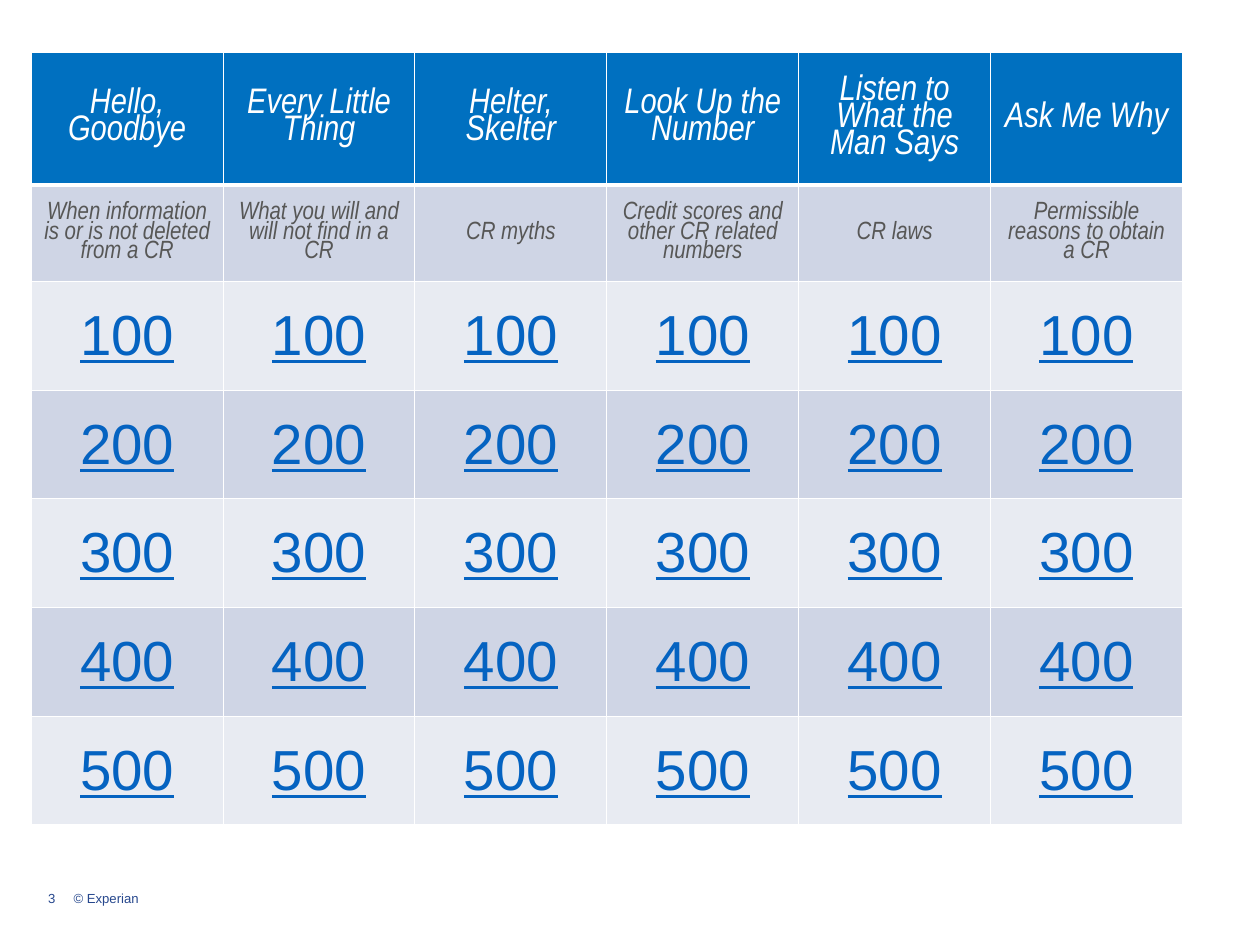
import lxml.etree
import pptx
import pptx.dml.color
import pptx.enum.text
import pptx.oxml.ns
import pptx.util

Inches = pptx.util.Inches
Pt = pptx.util.Pt
qn = pptx.oxml.ns.qn

CATEGORIES = [
    ("Hello, Goodbye", "When information is or is not deleted from a CR"),
    ("Every Little Thing", "What you will and will not find in a CR"),
    ("Helter, Skelter", "CR myths"),
    ("Look Up the Number", "Credit scores and other CR related numbers"),
    ("Listen to What the Man Says", "CR laws"),
    ("Ask Me Why", "Permissible reasons to obtain a CR"),
]
POINTS = [100, 200, 300, 400, 500]
ROW_HEIGHTS = [1.4, 1.02] + [1.15] * len(POINTS)
COLUMN_WIDTH = 2.03
BANDS = ["E8EBF2", "CFD5E5"]


def color(value):
    return pptx.dml.color.RGBColor.from_string(value)


def style_font(font, name, size, value, italic=False, underline=False):
    font.name = name
    font.size = Pt(size)
    font.color.rgb = color(value)
    font.bold = False
    font.italic = italic
    font.underline = underline


def add_border(cell, side, width):
    properties = cell._tc.get_or_add_tcPr()
    line = lxml.etree.SubElement(properties, qn("a:" + side), w=str(Pt(width)))
    fill = lxml.etree.SubElement(line, qn("a:solidFill"))
    lxml.etree.SubElement(fill, qn("a:srgbClr"), val="FFFFFF")


def fill_cell(cell, text, fill, spacing, bottom, top, **font):
    for side, width in (("lnL", 1), ("lnR", 1), ("lnT", top), ("lnB", bottom)):
        add_border(cell, side, width)
    cell.fill.solid()
    cell.fill.fore_color.rgb = color(fill)
    cell.vertical_anchor = pptx.enum.text.MSO_ANCHOR.MIDDLE
    cell.margin_left = cell.margin_right = Inches(0.13)
    cell.margin_top = cell.margin_bottom = Inches(0.07)
    para = cell.text_frame.paragraphs[0]
    para.text = text
    para.alignment = pptx.enum.text.PP_ALIGN.CENTER
    para.line_spacing = spacing
    style_font(para.font, **font)


def add_board(page):
    frame = page.shapes.add_table(
        len(ROW_HEIGHTS), len(CATEGORIES), Inches(0.33), Inches(0.56),
        Inches(COLUMN_WIDTH * len(CATEGORIES)), Inches(sum(ROW_HEIGHTS)))
    board = frame.table
    for row, height in zip(board.rows, ROW_HEIGHTS):
        row.height = Inches(height)
    for index, (title, topic) in enumerate(CATEGORIES):
        board.columns[index].width = Inches(COLUMN_WIDTH)
        fill_cell(board.cell(0, index), title, "0070C0", 0.82, 3, 1,
                  name="Arial Narrow", size=27, value="FFFFFF", italic=True)
        fill_cell(board.cell(1, index), topic, BANDS[1], 0.82, 1, 3,
                  name="Arial Narrow", size=19, value="575756", italic=True)
        for order, points in enumerate(POINTS):
            fill_cell(board.cell(order + 2, index), str(points),
                      BANDS[order % 2], 1.0, 1, 1,
                      name="Arial", size=43, value="0563C1", underline=True)


def add_footer(page):
    box = page.shapes.add_textbox(
        Inches(0.51), Inches(9.42), Inches(2.08), Inches(0.31))
    frame = box.text_frame
    frame.word_wrap = True
    frame.margin_left = frame.margin_right = 0
    frame.margin_top = frame.margin_bottom = 0
    para = frame.paragraphs[0]
    para.text = "3\t© Experian"
    tabs = lxml.etree.SubElement(para._p.get_or_add_pPr(), qn("a:tabLst"))
    lxml.etree.SubElement(tabs, qn("a:tab"), pos=str(Inches(0.27)), algn="l")
    style_font(para.font, "Arial", 10, "26478D")


def main():
    deck = pptx.Presentation()
    deck.slide_width = Inches(13.33)
    deck.slide_height = Inches(10)
    page = deck.slides.add_slide(deck.slide_layouts[6])
    add_footer(page)
    add_board(page)
    deck.save("out.pptx")


if __name__ == "__main__":
    main()
